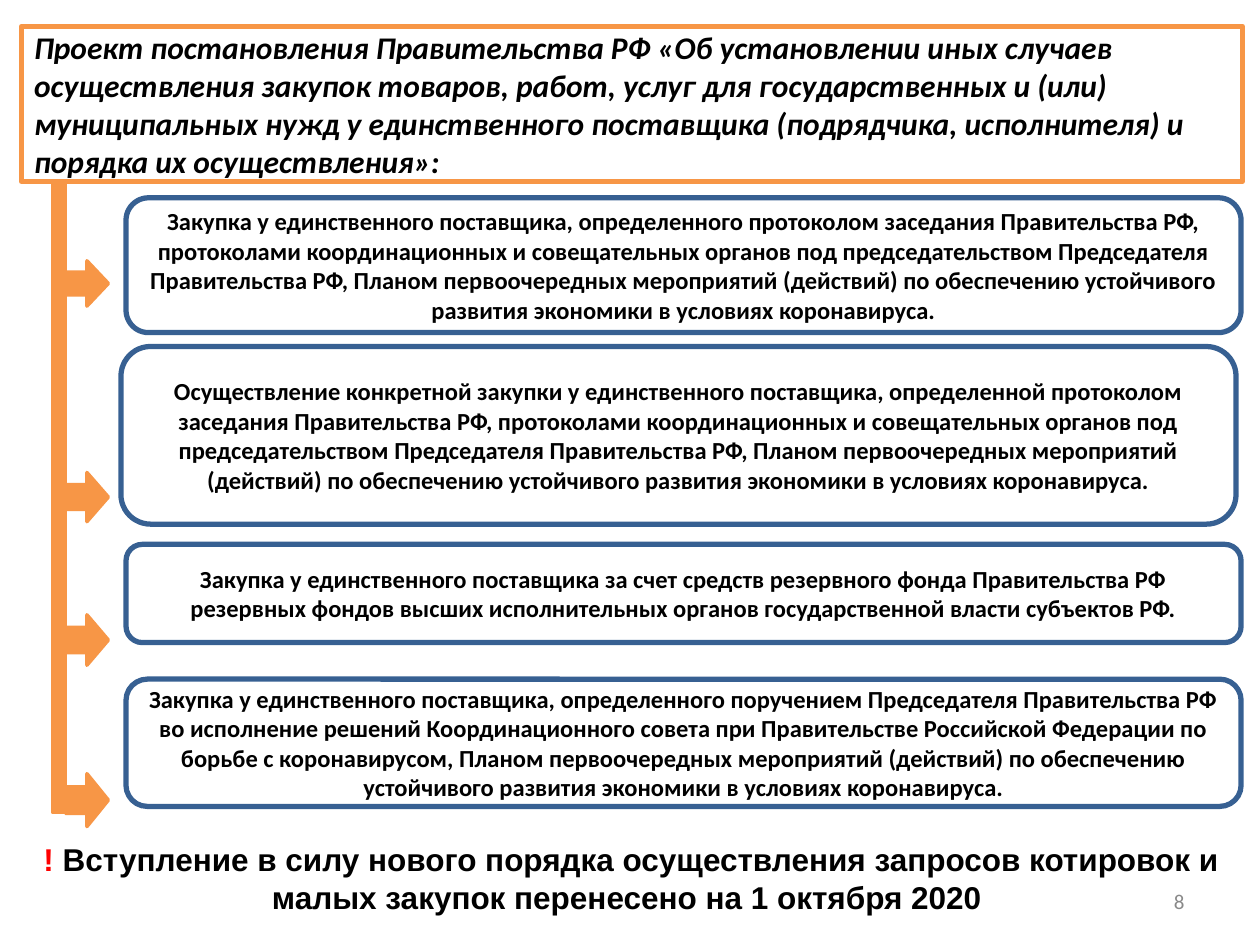
from lxml import etree
from pptx import Presentation
from pptx.dml.color import RGBColor
from pptx.enum import shapes, text
from pptx.oxml import ns
from pptx.util import Inches, Pt

ORANGE, BLUE, BLACK, WHITE = "F79646", "376092", "000000", "FFFFFF"

HEADING = (
    "Проект постановления Правительства РФ «Об установлении иных случаев "
    "осуществления закупок товаров, работ, услуг для государственных и (или) "
    "муниципальных нужд у единственного поставщика (подрядчика, исполнителя) "
    "и порядка их осуществления»:"
)
PROTOCOLS = (
    "протоколом заседания Правительства РФ, протоколами координационных и "
    "совещательных органов под председательством Председателя Правительства РФ, "
)
PLAN = (
    "Планом первоочередных мероприятий (действий) по обеспечению устойчивого "
    "развития экономики в условиях коронавируса."
)
# wording, box (left, top, height), arrow (top, height)
CASES = [
    ("Закупка у единственного поставщика, определенного " + PROTOCOLS + PLAN,
     (1, 1.57, 1.07), (2.07, 0.36)),
    ("Осуществление конкретной закупки у единственного поставщика, определенной "
     + PROTOCOLS + PLAN,
     (0.96, 2.75, 1.41), (3.75, 0.39)),
    ("Закупка у единственного поставщика за счет средств резервного фонда "
     "Правительства РФ резервных фондов высших исполнительных органов "
     "государственной власти субъектов РФ.",
     (1, 4.32, 0.78), (4.88, 0.4)),
    ("Закупка у единственного поставщика, определенного поручением Председателя "
     "Правительства РФ во исполнение решений Координационного совета при "
     "Правительстве Российской Федерации по борьбе с коронавирусом, " + PLAN,
     (1, 5.39, 1.01), (6.14, 0.42)),
]
NOTICE = [
    ("! ", "FF0000"),
    ("Вступление в силу нового порядка осуществления запросов котировок и "
     "малых закупок перенесено на 1 октября 2020 ", BLACK),
]
PAGE_NUMBER = "8"
CASE_WIDTH = 8.85
SPINE_LEFT, SPINE_WIDTH, ARROW_WIDTH = 0.42, 0.1, 0.34


def rgb(colour):
    return RGBColor.from_string(colour)


def outline(shape, fill, line, width):
    if fill:
        shape.fill.solid()
        shape.fill.fore_color.rgb = rgb(fill)
    else:
        shape.fill.background()
    shape.line.color.rgb = rgb(line)
    shape.line.width = Pt(width)


def add_block(slide, kind, box, fill, line, width):
    block = slide.shapes.add_shape(kind, *map(Inches, box))
    block.shadow.inherit = False
    outline(block, fill, line, width)
    return block


def write(shape, runs, size, align, anchor=text.MSO_ANCHOR.MIDDLE,
          font="Calibri", bold=True, italic=False):
    """Fill the shape with one paragraph of (wording, colour) runs."""
    frame = shape.text_frame
    frame.word_wrap = True
    frame.auto_size = text.MSO_AUTO_SIZE.NONE
    frame.vertical_anchor = anchor
    paragraph = frame.paragraphs[0]
    paragraph.alignment = align
    for wording, colour in runs:
        run = paragraph.add_run()
        run.text = wording
        run.font.name = font
        run.font.size = Pt(size)
        run.font.bold = bold
        run.font.italic = italic
        run.font.color.rgb = rgb(colour)


def add_heading(slide):
    heading = slide.shapes.title
    heading.left, heading.top, heading.width, heading.height = map(
        Inches, (0.17, 0.21, 9.69, 1.23))
    geometry = etree.SubElement(
        heading.element.spPr, ns.qn("a:prstGeom"), prst="roundRect")
    etree.SubElement(geometry, ns.qn("a:avLst"))
    outline(heading, WHITE, ORANGE, 3)
    write(heading, [(HEADING, BLACK)], 18, text.PP_ALIGN.LEFT, italic=True)


def main():
    deck = Presentation()
    deck.slide_width, deck.slide_height = Inches(10), Inches(7.5)
    slide = deck.slides.add_slide(deck.slide_layouts.get_by_name("Title Only"))
    kinds, align = shapes.MSO_SHAPE, text.PP_ALIGN

    add_heading(slide)
    for wording, (left, top, height), _ in CASES:
        case = add_block(slide, kinds.ROUNDED_RECTANGLE,
                         (left, top, CASE_WIDTH, height), None, BLUE, 3)
        write(case, [(wording, BLACK)], 14, align.CENTER)

    add_block(slide, kinds.RECTANGLE, (SPINE_LEFT, 1.44, SPINE_WIDTH, 5.01),
              ORANGE, ORANGE, 2)
    for _, _, (top, height) in CASES:
        add_block(slide, kinds.RIGHT_ARROW,
                  (SPINE_LEFT + SPINE_WIDTH, top, ARROW_WIDTH, height),
                  ORANGE, ORANGE, 2)

    notice = slide.shapes.add_textbox(*map(Inches, (0.13, 6.62, 9.76, 0.71)))
    write(notice, NOTICE, 18, align.CENTER, text.MSO_ANCHOR.TOP, font="Arial")
    page = slide.shapes.add_textbox(*map(Inches, (7.17, 6.95, 2.33, 0.4)))
    write(page, [(PAGE_NUMBER, "898989")], 12, align.RIGHT, bold=False)

    deck.save("out.pptx")


if __name__ == "__main__":
    main()
